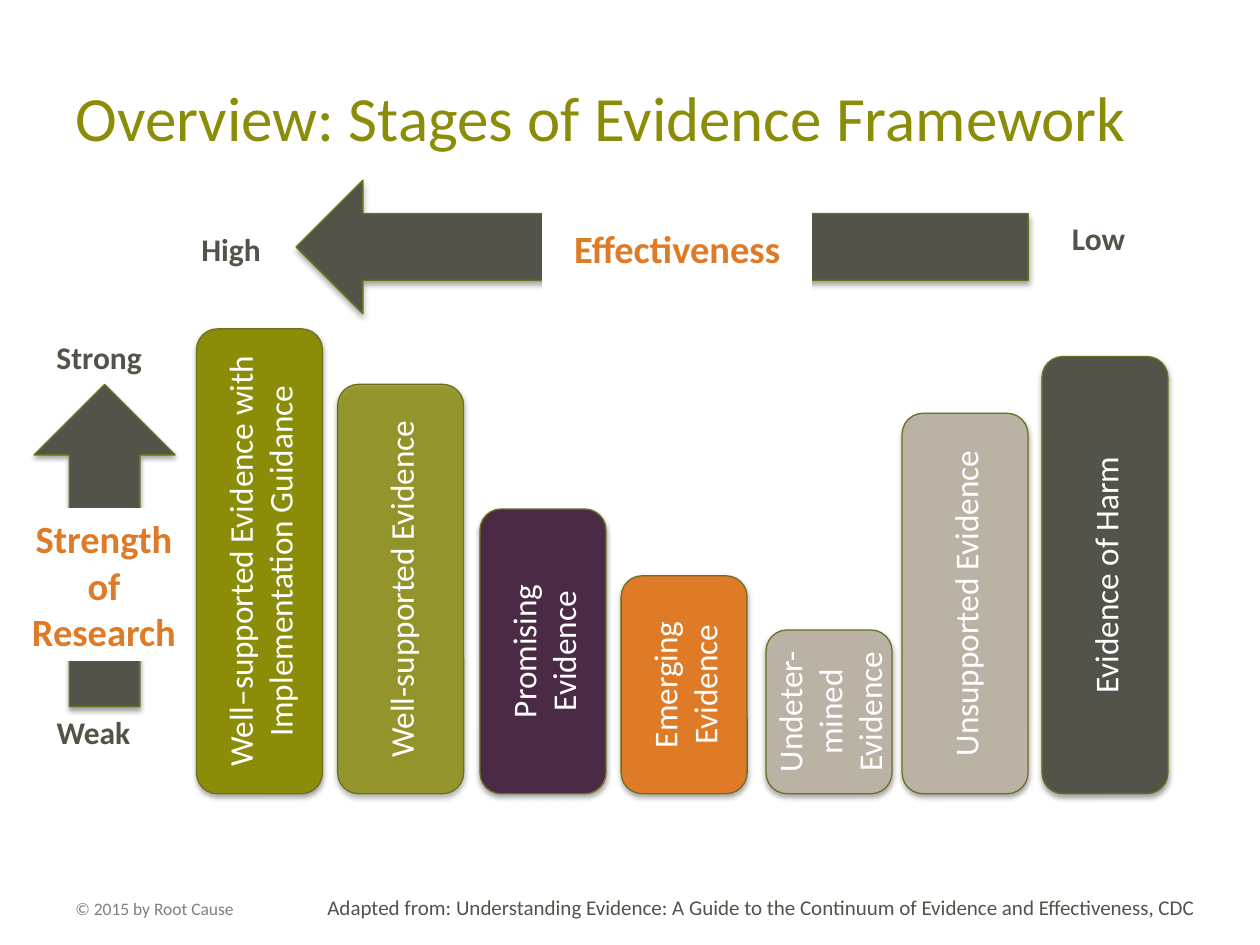
from dataclasses import dataclass

from lxml.etree import SubElement
from pptx import Presentation
from pptx.dml.color import RGBColor
from pptx.enum.shapes import MSO_SHAPE as Preset
from pptx.enum.text import MSO_ANCHOR as Anchor, MSO_AUTO_SIZE as AutoSize, PP_ALIGN as Align
from pptx.oxml.ns import qn
from pptx.util import Inches, Pt


@dataclass(frozen=True)
class Theme:
    font: str = "Calibri"
    olive: str = "8B8D09"
    outline: str = "6B7021"
    charcoal: str = "535349"
    stone: str = "BBB2A6"
    plum: str = "4B2A46"
    orange: str = "DF7A26"
    gray: str = "7F7F7F"
    white: str = "FFFFFF"
    title_size: float = 36
    axis_size: float = 22
    bar_size: float = 19
    label_size: float = 18
    source_size: float = 12
    copyright_size: float = 10


@dataclass(frozen=True)
class Box:
    left: float
    top: float
    width: float
    height: float

    def lengths(self) -> tuple:
        return tuple(Inches(n) for n in (self.left, self.top, self.width, self.height))


@dataclass(frozen=True)
class Bar:
    text: str
    left: float
    top: float
    color: str
    opacity: int = 100


@dataclass(frozen=True)
class Label:
    text: str
    box: Box
    size: float
    color: str
    bold: bool = True


@dataclass(frozen=True)
class Axis:
    preset: Preset
    arrow: Box
    caption: str
    caption_box: Box


THEME = Theme()
BAR_WIDTH = 1
BAR_BOTTOM = 6.3

BARS = [
    Bar("Well–supported Evidence with Implementation Guidance", 1.56, 2.61, THEME.olive),
    Bar("Well-supported Evidence", 2.68, 3.05, THEME.olive, 80),
    Bar("Promising Evidence", 3.81, 4.04, THEME.plum),
    Bar("Emerging Evidence", 4.93, 4.57, THEME.orange),
    Bar("Undeter-mined Evidence", 6.08, 5, THEME.stone),
    Bar("Unsupported Evidence", 7.16, 3.28, THEME.stone),
    Bar("Evidence of Harm", 8.27, 2.83, THEME.charcoal),
]

AXES = [
    Axis(Preset.DOWN_ARROW, Box(0.27, 3.05, 1.12, 2.56),
         "Strength of Research", Box(0.15, 4.04, 1.35, 1.2)),
    Axis(Preset.RIGHT_ARROW, Box(2.35, 1.43, 5.81, 1.06),
         "Effectiveness", Box(4.31, 1.52, 2.13, 0.89)),
]

LABELS = [
    Label("Strong", Box(0.35, 2.63, 1.06, 0.4), THEME.label_size, THEME.charcoal),
    Label("Weak", Box(0.35, 5.61, 0.88, 0.4), THEME.label_size, THEME.charcoal),
    Label("High", Box(1.5, 1.78, 1.06, 0.4), THEME.label_size, THEME.charcoal),
    Label("Low", Box(8.41, 1.69, 1.06, 0.4), THEME.label_size, THEME.charcoal),
    Label("© 2015 by Root Cause", Box(0.5, 7.08, 1.67, 0.27),
          THEME.copyright_size, THEME.gray, False),
    Label("Adapted from: Understanding Evidence: A Guide to the Continuum of Evidence "
          "and Effectiveness, CDC", Box(2.5, 7.05, 7.45, 0.3),
          THEME.source_size, THEME.charcoal, False),
]


def write_text(shape, text: str, size: float, color: str, bold: bool = False,
               align: Align = Align.LEFT, anchor: Anchor = Anchor.TOP) -> None:
    frame = shape.text_frame
    frame.text = text
    frame.word_wrap = True
    frame.vertical_anchor = anchor
    paragraph = frame.paragraphs[0]
    paragraph.alignment = align
    font = paragraph.runs[0].font
    font.name = THEME.font
    font.size = Pt(size)
    font.bold = bold
    font.color.rgb = RGBColor.from_string(color)


def add_block(slide, preset: Preset, box: Box, fill: str, line: str):
    shape = slide.shapes.add_shape(preset, *box.lengths())
    shape.shadow.inherit = False
    shape.fill.solid()
    shape.fill.fore_color.rgb = RGBColor.from_string(fill)
    shape.line.color.rgb = RGBColor.from_string(line)
    shape.line.width = Pt(0.75)
    return shape


def add_alpha(color_element, percent: int) -> None:
    SubElement(color_element, qn("a:alpha"), val=str(percent * 1000))


def add_shadow(shape) -> None:
    effects = shape._element.spPr.find(qn("a:effectLst"))
    shadow = SubElement(effects, qn("a:outerShdw"), blurRad=str(Pt(3.1)),
                        dist=str(Pt(1.8)), dir="5400000", rotWithShape="0")
    add_alpha(SubElement(shadow, qn("a:srgbClr"), val="000000"), 35)


def add_bar(slide, bar: Bar) -> None:
    box = Box(bar.left, bar.top, BAR_WIDTH, BAR_BOTTOM - bar.top)
    shape = add_block(slide, Preset.ROUNDED_RECTANGLE, box, bar.color, THEME.outline)
    add_shadow(shape)
    if bar.opacity < 100:
        fill = shape._element.spPr.find(qn("a:solidFill"))
        add_alpha(fill.find(qn("a:srgbClr")), bar.opacity)
    write_text(shape, bar.text, THEME.bar_size, THEME.white,
               align=Align.CENTER, anchor=Anchor.MIDDLE)
    shape.text_frame._txBody.bodyPr.set("vert", "vert270")


def add_axis(slide, axis: Axis) -> None:
    arrow = add_block(slide, axis.preset, axis.arrow, THEME.charcoal, THEME.outline)
    arrow.rotation = 180
    add_shadow(arrow)
    caption = add_block(slide, Preset.RECTANGLE, axis.caption_box, THEME.white, THEME.white)
    write_text(caption, axis.caption, THEME.axis_size, THEME.orange, True,
               Align.CENTER, Anchor.MIDDLE)


def add_label(slide, label: Label) -> None:
    shape = slide.shapes.add_textbox(*label.box.lengths())
    write_text(shape, label.text, label.size, label.color, label.bold)
    shape.text_frame.auto_size = AutoSize.SHAPE_TO_FIT_TEXT


def add_title(slide, text: str, box: Box) -> None:
    title = slide.shapes.title
    title.left, title.top, title.width, title.height = box.lengths()
    write_text(title, text, THEME.title_size, THEME.olive, anchor=Anchor.MIDDLE)


def main() -> None:
    presentation = Presentation()
    presentation.slide_width = Inches(10)
    presentation.slide_height = Inches(7.5)
    slide = presentation.slides.add_slide(presentation.slide_layouts[5])
    add_title(slide, "Overview: Stages of Evidence Framework", Box(0.5, 0.3, 9, 1.25))
    for bar in BARS:
        add_bar(slide, bar)
    for axis in AXES:
        add_axis(slide, axis)
    for label in LABELS:
        add_label(slide, label)
    presentation.save("out.pptx")


if __name__ == "__main__":
    main()
